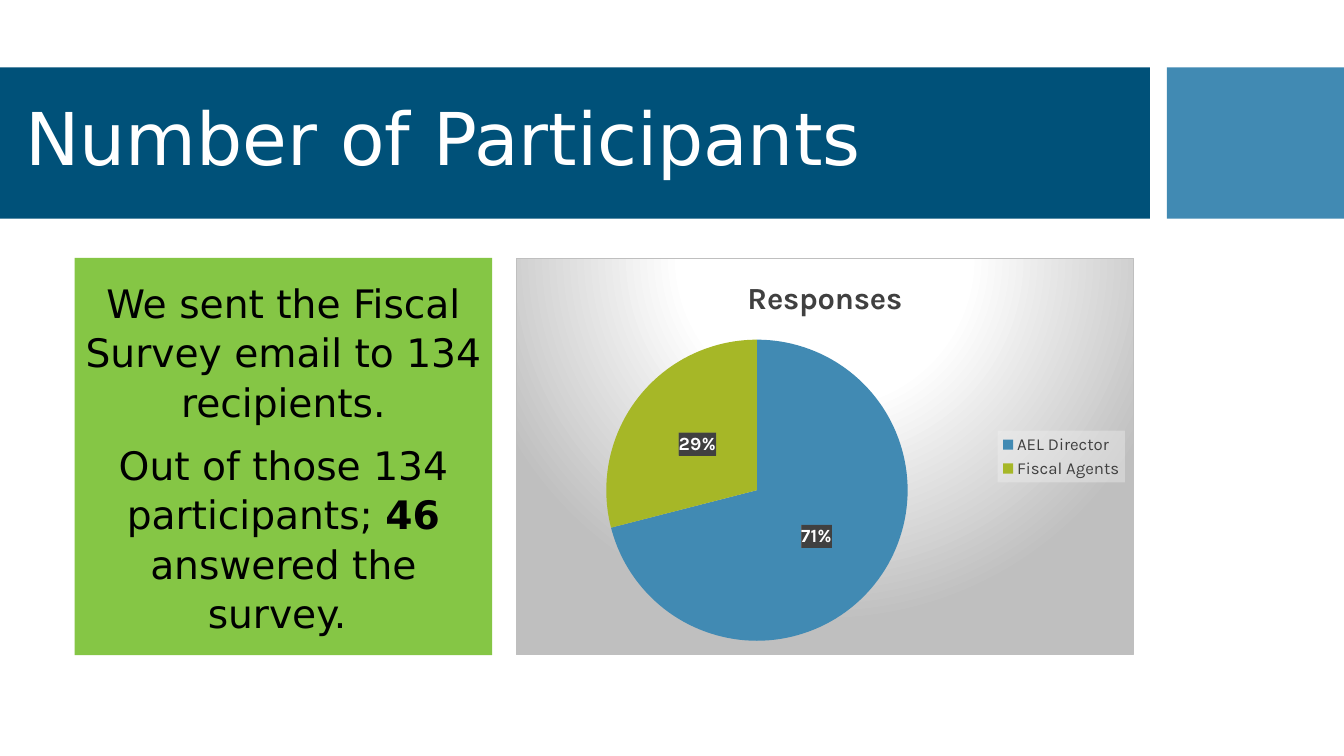
import pptx
import pptx.chart.data
import pptx.dml.color
import pptx.enum.chart
import pptx.enum.shapes
import pptx.enum.text
import pptx.oxml
import pptx.oxml.ns
import pptx.util
from pptx.util import Cm, Pt

NAVY = pptx.dml.color.RGBColor(0x00, 0x51, 0x79)
BLUE = pptx.dml.color.RGBColor(0x41, 0x8A, 0xB3)
GREEN = pptx.dml.color.RGBColor(0x85, 0xC6, 0x45)
OLIVE = pptx.dml.color.RGBColor(0xA6, 0xB7, 0x27)
WHITE = pptx.dml.color.RGBColor(0xFF, 0xFF, 0xFF)
BLACK = pptx.dml.color.RGBColor(0x00, 0x00, 0x00)
GRAY = pptx.dml.color.RGBColor(0x40, 0x40, 0x40)
SILVER = pptx.dml.color.RGBColor(0xBF, 0xBF, 0xBF)
MIST = pptx.dml.color.RGBColor(0xF2, 0xF2, 0xF2)
TEXT_FONT = "DejaVu Sans"
CHART_FONT = "Karla"


def style_font(font, name, size, color, bold=False):
    font.name = name
    font.size = Pt(size)
    font.color.rgb = color
    font.bold = bold


def add_background(parent, content):
    properties = pptx.oxml.parse_xml(
        f'<c:spPr {pptx.oxml.ns.nsdecls("c", "a")}>{content}</c:spPr>')
    parent.find(pptx.oxml.ns.qn("c:txPr")).addprevious(properties)


deck = pptx.Presentation()
deck.slide_width = Cm(33.87)
deck.slide_height = Cm(19.05)
page = deck.slides.add_slide(deck.slide_layouts[1])

bands = [(0, 28.98, NAVY), (29.41, 4.46, BLUE)]
for position, (left, width, color) in enumerate(bands):
    band = page.shapes.add_shape(
        pptx.enum.shapes.MSO_SHAPE.RECTANGLE, Cm(left), Cm(1.7), Cm(width), Cm(3.81))
    band.shadow.inherit = False
    band.fill.solid()
    band.fill.fore_color.rgb = color
    band.line.fill.background()
    page.shapes.element.insert(2 + position, band.element)

title = page.shapes.title
title.left, title.top, title.width, title.height = Cm(0.38), Cm(2.08), Cm(28.22), Cm(3)
title.text_frame.text = "Number of Participants"
title.text_frame.auto_size = pptx.enum.text.MSO_AUTO_SIZE.NONE
title.text_frame.vertical_anchor = pptx.enum.text.MSO_ANCHOR.MIDDLE
heading = title.text_frame.paragraphs[0]
heading.alignment = pptx.enum.text.PP_ALIGN.LEFT
heading.line_spacing = 0.9
style_font(heading.runs[0].font, TEXT_FONT, 52, WHITE)

body = page.placeholders[1]
body.left, body.top, body.width, body.height = Cm(1.88), Cm(6.5), Cm(10.52), Cm(10.01)
body.fill.solid()
body.fill.fore_color.rgb = GREEN
body.text_frame.auto_size = pptx.enum.text.MSO_AUTO_SIZE.NONE
body.text_frame.vertical_anchor = pptx.enum.text.MSO_ANCHOR.MIDDLE
statements = [
    [("We sent the Fiscal Survey email to 134 recipients.", False)],
    [("Out of those 134 participants; ", False), ("46", True),
     (" answered the survey. ", False)],
]
for index, pieces in enumerate(statements):
    para = body.text_frame.add_paragraph() if index else body.text_frame.paragraphs[0]
    para.alignment = pptx.enum.text.PP_ALIGN.CENTER
    para.line_spacing = 1.05
    para.space_before = Pt(10 if index else 0)
    settings = para._p.get_or_add_pPr()
    settings.set("marL", "0")
    settings.set("indent", "0")
    settings.append(pptx.oxml.parse_xml(f'<a:buNone {pptx.oxml.ns.nsdecls("a")}/>'))
    for wording, bold in pieces:
        span = para.add_run()
        span.text = wording
        style_font(span.font, TEXT_FONT, 28, BLACK, bold)

responses = pptx.chart.data.CategoryChartData()
responses.categories = ["AEL Director", "Fiscal Agents"]
responses.add_series("Responses", (71, 29))
chart = page.shapes.add_chart(
    pptx.enum.chart.XL_CHART_TYPE.PIE,
    Cm(13), Cm(6.5), Cm(15.57), Cm(10.01), responses).chart
style_font(chart.font, CHART_FONT, 10, BLACK)
add_background(chart.element, f'''
    <a:gradFill><a:gsLst>
      <a:gs pos="0"><a:srgbClr val="{WHITE}"/></a:gs>
      <a:gs pos="39000"><a:srgbClr val="{WHITE}"/></a:gs>
      <a:gs pos="100000"><a:srgbClr val="{SILVER}"/></a:gs>
    </a:gsLst><a:path path="circle">
      <a:fillToRect l="50000" t="-80000" r="50000" b="180000"/>
    </a:path></a:gradFill>
    <a:ln w="9525"><a:solidFill><a:srgbClr val="{SILVER}"/></a:solidFill></a:ln>''')

chart.has_title = True
chart.chart_title.include_in_layout = False
chart.chart_title.text_frame.text = "Responses"
caption = chart.chart_title.text_frame.paragraphs[0].runs[0]
style_font(caption.font, CHART_FONT, 22, GRAY, True)

chart.has_legend = True
chart.legend.position = pptx.enum.chart.XL_LEGEND_POSITION.RIGHT
chart.legend.include_in_layout = False
style_font(chart.legend.font, CHART_FONT, 12, GRAY)
add_background(chart.legend._element, f'''
    <a:solidFill><a:srgbClr val="{MIST}"><a:alpha val="39000"/></a:srgbClr></a:solidFill>''')

pie = chart.plots[0]
pie.vary_by_categories = True
for index, color in enumerate([BLUE, OLIVE]):
    slice_fill = pie.series[0].points[index].format.fill
    slice_fill.solid()
    slice_fill.fore_color.rgb = color

labels = pie.series[0].data_labels
labels.show_percentage = True
labels.show_value = False
labels.number_format = "0%"
labels.number_format_is_linked = False
labels.position = pptx.enum.chart.XL_LABEL_POSITION.CENTER
style_font(labels.font, CHART_FONT, 13.3, WHITE, True)
add_background(labels._element, f'''
    <a:pattFill prst="dkVert"><a:fgClr><a:srgbClr val="{GRAY}"/></a:fgClr>
    <a:bgClr><a:srgbClr val="595959"/></a:bgClr></a:pattFill>''')

deck.save("out.pptx")
